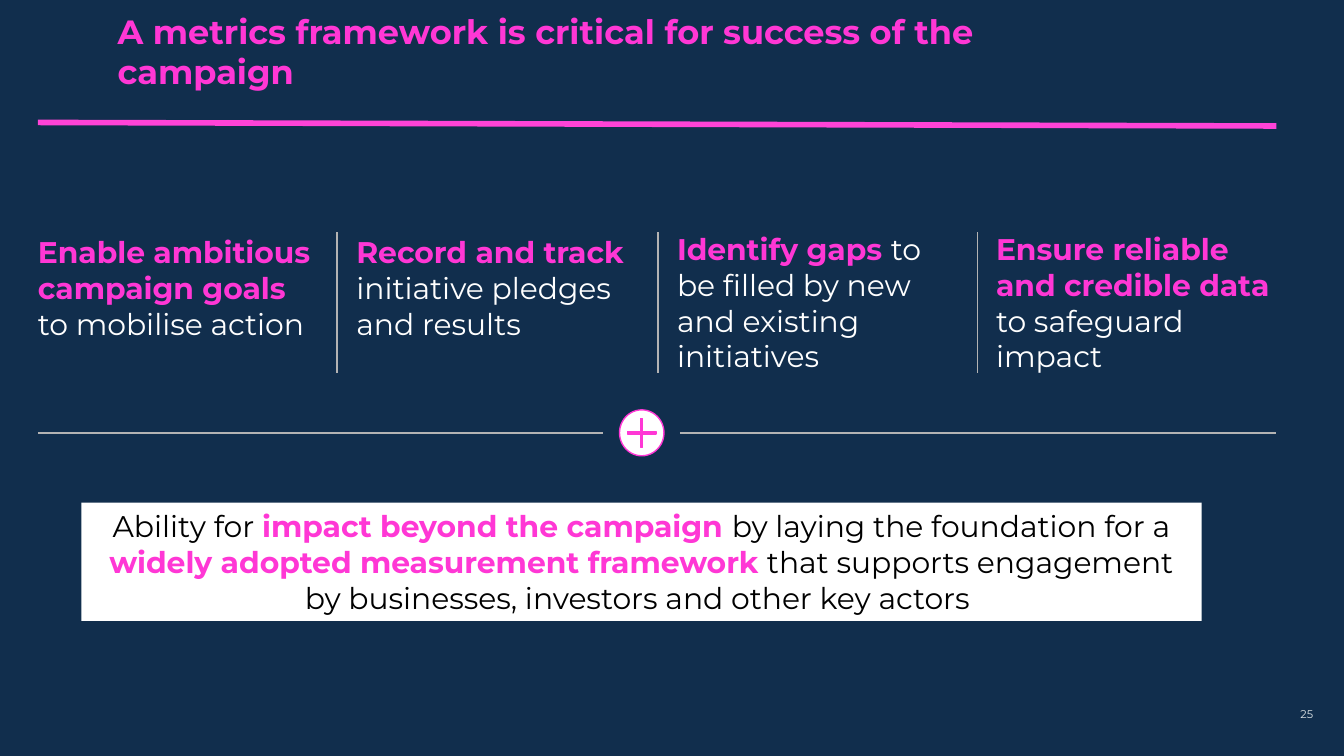
import dataclasses

import pptx
import pptx.dml.color
import pptx.enum.shapes
import pptx.enum.text
import pptx.oxml
import pptx.oxml.ns
import pptx.util

Pt = pptx.util.Pt
Shape = pptx.enum.shapes.MSO_SHAPE
Align = pptx.enum.text.PP_ALIGN
Anchor = pptx.enum.text.MSO_ANCHOR


@dataclasses.dataclass(frozen=True)
class Theme:
    font: str = "Montserrat"
    background: str = "112E4D"
    accent: str = "FF37D5"
    title_rule: str = "FF43D7"
    rule: str = "B3B3B3"
    white: str = "FFFFFF"
    black: str = "000000"
    page_number: str = "DBE2E4"
    title_size: float = 18
    body_size: float = 16
    number_size: float = 6


def rgb(value):
    return pptx.dml.color.RGBColor.from_string(value)


def write_text(shape, runs, *, font, size, align=Align.LEFT, anchor=Anchor.TOP,
               margins=(0, 0, 0, 0)):
    """Fill a shape with one paragraph; runs are (text, colour, bold)."""
    frame = shape.text_frame
    frame.word_wrap = True
    frame.auto_size = pptx.enum.text.MSO_AUTO_SIZE.NONE
    frame.vertical_anchor = anchor
    (frame.margin_left, frame.margin_top,
     frame.margin_right, frame.margin_bottom) = map(Pt, margins)
    para = frame.paragraphs[0]
    para.alignment = align
    para.line_spacing = 1.0
    for text, colour, bold in runs:
        span = para.add_run()
        span.text = text
        span.font.name = font
        span.font.size = Pt(size)
        span.font.bold = bold
        span.font.color.rgb = rgb(colour)


class SlideBuilder:
    def __init__(self, page, theme):
        self.page = page
        self.theme = theme
        page.background.fill.solid()
        page.background.fill.fore_color.rgb = rgb(theme.background)

    def title(self, text, left, top, width, height, indent):
        box = self.page.shapes.title
        box.left, box.top, box.width, box.height = map(Pt, (left, top, width, height))
        write_text(box, [(text, self.theme.accent, True)], font=self.theme.font,
                   size=self.theme.title_size, margins=(indent, 0, 0, 0))

    def text(self, runs, left, top, width, height, size, **text_format):
        box = self.page.shapes.add_textbox(*map(Pt, (left, top, width, height)))
        write_text(box, runs, font=self.theme.font, size=size, **text_format)

    def line(self, start, end, colour, weight):
        line = self.page.shapes.add_connector(
            pptx.enum.shapes.MSO_CONNECTOR.STRAIGHT, *map(Pt, (*start, *end)))
        line.line.color.rgb = rgb(colour)
        line.line.width = Pt(weight)
        properties = line._element.find(pptx.oxml.ns.qn("p:spPr"))
        properties.append(pptx.oxml.parse_xml(
            f"<a:effectLst {pptx.oxml.ns.nsdecls('a')}/>"))

    def shape(self, kind, left, top, width, height, fill, outline=None):
        shape = self.page.shapes.add_shape(kind, *map(Pt, (left, top, width, height)))
        shape.shadow.inherit = False
        shape.fill.solid()
        shape.fill.fore_color.rgb = rgb(fill)
        if outline:
            shape.line.color.rgb = rgb(outline)
            shape.line.width = Pt(0.75)
        else:
            shape.line.fill.background()
        return shape

    def plus_badge(self, centre_x, centre_y):
        """Draw a thin plus sign inside an outlined circle."""
        for kind, width, height, fill in (
                (Shape.OVAL, 23.8, 24.6, self.theme.white),
                (Shape.CROSS, 15.2, 15.6, self.theme.accent)):
            part = self.shape(kind, centre_x - width / 2, centre_y - height / 2,
                              width, height, fill, self.theme.accent)
        part.adjustments[0] = 0.47


def main():
    theme = Theme()
    deck = pptx.Presentation()
    deck.slide_width, deck.slide_height = Pt(720), Pt(405)
    page = deck.slides.add_slide(deck.slide_layouts[5])
    builder = SlideBuilder(page, theme)
    left_edge, right_edge = 20.3, 683.8

    builder.title("A metrics framework is critical for success of the campaign",
                  left_edge, 5.6, 588, 44, indent=42.7)
    builder.line((left_edge, 65.6), (right_edge, 67.5), theme.title_rule, 3)

    benefits = [
        (left_edge, 182.8, "Enable ambitious campaign goals ", "to mobilise action"),
        (190.9, 182.8, "Record and track ", "initiative pledges and results"),
        (362.7, 200.3, "Identify gaps ", "to be filled by new and existing initiatives"),
        (533.6, 200.3, "Ensure reliable and credible data ", "to safeguard impact"),
    ]
    height = 78
    for left, bottom, lead, rest in benefits:
        builder.text([(lead, theme.accent, True), (rest, theme.white, False)],
                     left, bottom - height, 150.5, height, theme.body_size,
                     anchor=Anchor.BOTTOM)
    for x in (180.6, 352.5, 523.6):
        builder.line((x, 124.4), (x, 199.8), theme.rule, 0.75)

    middle = 231.9
    for start, end in ((left_edge, 323), (364.3, right_edge)):
        builder.line((start, middle), (end, middle), theme.rule, 1)
    builder.plus_badge(343.8, middle)

    panel = builder.shape(Shape.RECTANGLE, 43.6, 269.3, 600.2, 63.4, theme.white)
    write_text(panel, [
        ("Ability for ", theme.black, False),
        ("impact beyond the campaign ", theme.accent, True),
        ("by laying the foundation for a ", theme.black, False),
        ("widely adopted measurement framework", theme.accent, True),
        (" that supports engagement by businesses, investors and other key actors ",
         theme.black, False),
    ], font=theme.font, size=theme.body_size, align=Align.CENTER,
        anchor=Anchor.MIDDLE, margins=(5, 3, 5, 3))

    builder.text([("25", theme.page_number, False)], 667.4, 367.2, 43.2, 31,
                 theme.number_size, align=Align.RIGHT, anchor=Anchor.MIDDLE,
                 margins=(7.2, 7.2, 7.2, 7.2))
    deck.save("out.pptx")


if __name__ == "__main__":
    main()
